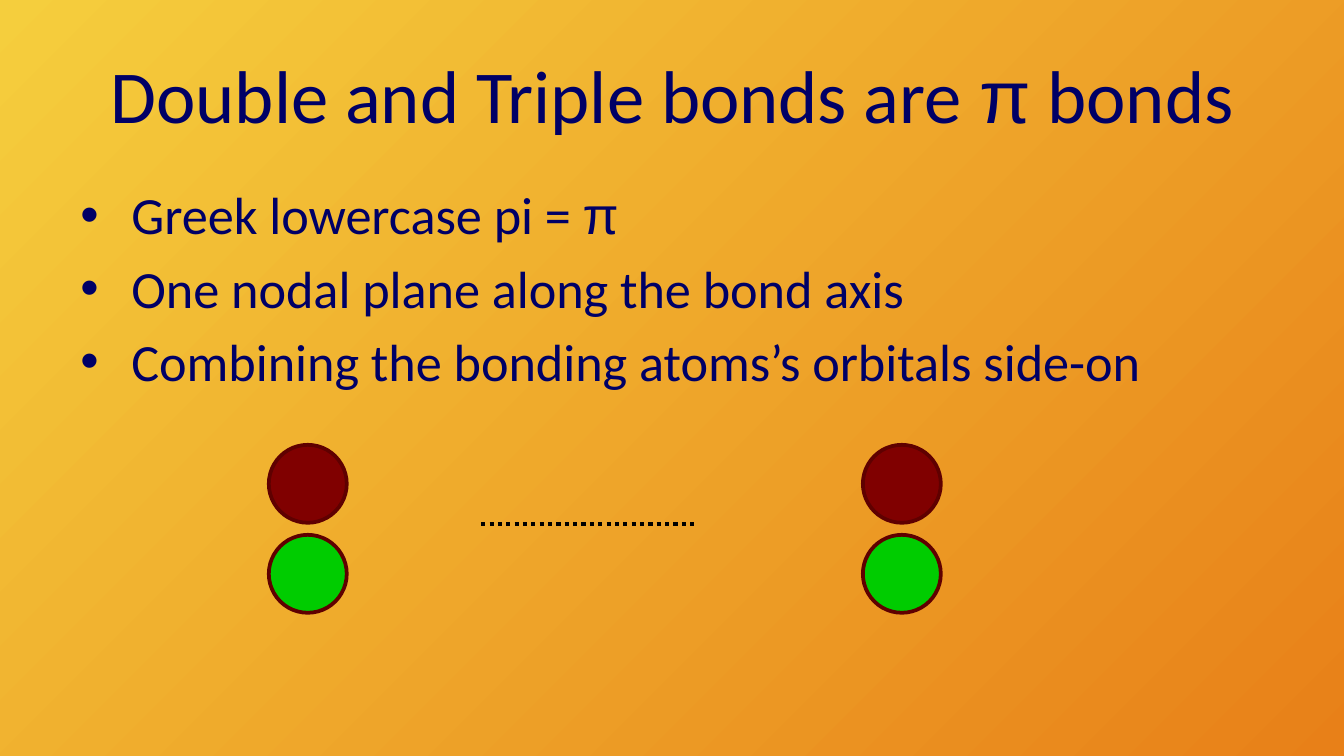
from typing import NamedTuple

from lxml.etree import SubElement
from pptx import Presentation
from pptx.dml.color import RGBColor
from pptx.enum.dml import MSO_LINE_DASH_STYLE as Dash
from pptx.enum.shapes import MSO_CONNECTOR_TYPE as Connector
from pptx.enum.shapes import MSO_SHAPE as Shape
from pptx.enum.text import MSO_ANCHOR as Anchor
from pptx.enum.text import PP_ALIGN as Align
from pptx.oxml.ns import qn
from pptx.util import Inches, Pt

NAVY = RGBColor(0x00, 0x00, 0x66)
YELLOW = RGBColor(0xF5, 0xCE, 0x3D)
ORANGE = RGBColor(0xE8, 0x80, 0x18)
MAROON = RGBColor(0x80, 0x00, 0x00)
GREEN = RGBColor(0x00, 0xCC, 0x00)
OUTLINE = RGBColor(0x5F, 0x00, 0x00)
BLACK = RGBColor(0x00, 0x00, 0x00)

SLIDE_WIDTH = Inches(10)
SLIDE_HEIGHT = Inches(10 * 9 / 16)
LOBE_SIZE = Inches(0.58)
ATOM_LEFTS = (2, 6.42)


class Lobe(NamedTuple):
    top: float
    color: RGBColor


class TextArea(NamedTuple):
    top: float
    height: float
    size: int
    anchor: Anchor
    lines: tuple[str, ...]
    paragraph_format: dict
    bulleted: bool = False


LOBES = (Lobe(3.31, MAROON), Lobe(3.98, GREEN))
TITLE = TextArea(
    0.23, 0.94, 40, Anchor.MIDDLE,
    ("Double and Triple bonds are π bonds",),
    {"alignment": Align.CENTER},
)
BODY = TextArea(
    1.31, 2, 28, Anchor.TOP,
    (
        "Greek lowercase pi = π",
        "One nodal plane along the bond axis",
        "Combining the bonding atoms’s orbitals side-on",
    ),
    {"alignment": Align.LEFT, "space_before": Pt(5.6)},
    bulleted=True,
)


def add_bullet(paragraph) -> None:
    properties = paragraph._p.get_or_add_pPr()
    properties.set("marL", str(Inches(0.38)))
    properties.set("indent", str(-Inches(0.38)))
    SubElement(properties, qn("a:buFont")).set("typeface", "Arial")
    SubElement(properties, qn("a:buChar")).set("char", "•")


def add_line(paragraph, line: str, size: int) -> None:
    """Write a line in Calibri, with any π in Arial."""
    before, pi, after = line.partition("π")
    for text, font_name in ((before, "Calibri"), (pi, "Arial"), (after, "Calibri")):
        if text:
            run = paragraph.add_run()
            run.text = text
            for name, value in {"name": font_name, "size": Pt(size)}.items():
                setattr(run.font, name, value)
            run.font.color.rgb = NAVY


def add_text_area(slide, area: TextArea) -> None:
    frame = slide.shapes.add_textbox(
        Inches(0.5), Inches(area.top), Inches(9), Inches(area.height)
    ).text_frame
    frame.word_wrap = True
    frame.vertical_anchor = area.anchor
    for index, line in enumerate(area.lines):
        paragraph = frame.add_paragraph() if index else frame.paragraphs[0]
        for name, value in area.paragraph_format.items():
            setattr(paragraph, name, value)
        if area.bulleted:
            add_bullet(paragraph)
        add_line(paragraph, line, area.size)


def add_lobe(slide, left: float, lobe: Lobe) -> None:
    circle = slide.shapes.add_shape(
        Shape.OVAL, Inches(left), Inches(lobe.top), LOBE_SIZE, LOBE_SIZE
    )
    circle.shadow.inherit = False
    circle.fill.solid()
    circle.fill.fore_color.rgb = lobe.color
    circle.line.color.rgb = OUTLINE
    circle.line.width = Pt(2)


def add_bond_axis(slide) -> None:
    axis = slide.shapes.add_connector(
        Connector.STRAIGHT, Inches(3.58), Inches(3.9), Inches(5.17), Inches(3.9)
    )
    axis.line.color.rgb = BLACK
    # ROUND_DOT is stored as sysDot
    for name, value in {"width": Pt(2.25), "dash_style": Dash.ROUND_DOT}.items():
        setattr(axis.line, name, value)
    SubElement(axis._element.spPr, qn("a:effectLst"))


def paint_background(slide) -> None:
    fill = slide.background.fill
    fill.gradient()
    fill.gradient_angle = 315  # counter-clockwise: top left to bottom right
    for stop, color in zip(fill.gradient_stops, (YELLOW, ORANGE)):
        stop.color.rgb = color


def main() -> None:
    presentation = Presentation()
    presentation.slide_width = SLIDE_WIDTH
    presentation.slide_height = SLIDE_HEIGHT
    slide = presentation.slides.add_slide(presentation.slide_layouts[6])
    paint_background(slide)
    for area in (TITLE, BODY):
        add_text_area(slide, area)
    for lobe in LOBES:
        for left in ATOM_LEFTS:
            add_lobe(slide, left, lobe)
    add_bond_axis(slide)
    presentation.save("out.pptx")


if __name__ == "__main__":
    main()
